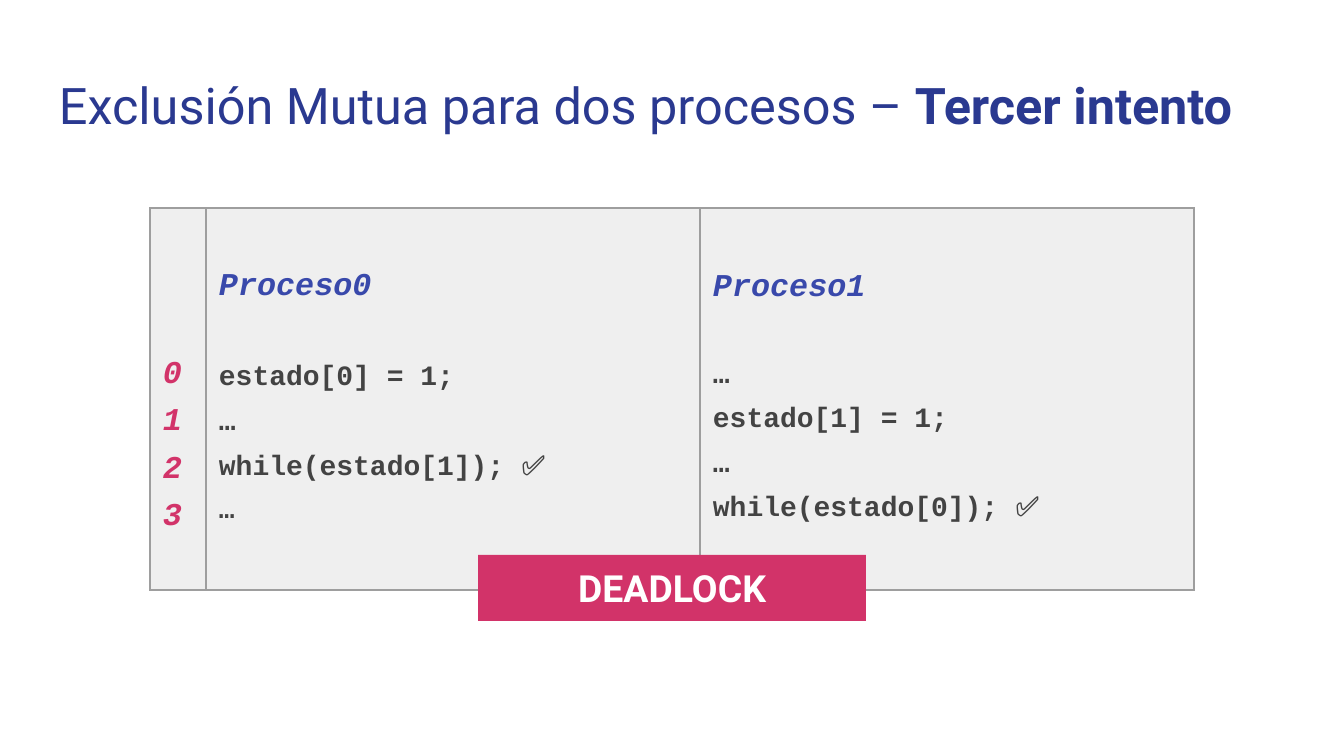
from lxml.etree import SubElement
from pptx import Presentation
from pptx.dml.color import RGBColor
from pptx.enum.shapes import MSO_SHAPE as Shape
from pptx.enum.text import MSO_ANCHOR as Anchor, PP_ALIGN as Align
from pptx.oxml.ns import qn
from pptx.util import Emu, Pt

EMU_PER_PX = 914400 / 134.4
INSET = 13
COLORS = {
    "title": "2A3990",
    "process": "3949AB",
    "code": "434343",
    "accent": "D23369",
    "cell": "EFEFEF",
    "border": "9E9E9E",
    "white": "FFFFFF",
}
FORMATS = {
    "title": {"name": "Roboto", "size": Pt(27), "bold": False},
    "attempt": {"name": "Roboto", "size": Pt(27), "bold": True},
    "process": {"name": "Courier New", "size": Pt(17), "bold": True, "italic": True},
    "code": {"name": "Courier New", "size": Pt(15), "bold": True, "italic": False},
    "small_code": {"name": "Courier New", "size": Pt(14), "bold": True, "italic": False},
    "banner": {"name": "Roboto", "size": Pt(20), "bold": True},
}


def px(value):
    return Emu(round(value * EMU_PER_PX))


def box(*values):
    return [px(value) for value in values]


def rgb(name):
    return RGBColor.from_string(COLORS[name])


def set_attributes(target, values):
    for name, value in values.items():
        setattr(target, name, value)


def add_run(paragraph, text, style, color):
    run = paragraph.add_run()
    run.text = text
    set_attributes(run.font, FORMATS[style])
    run.font.color.rgb = rgb(color)


def set_insets(target):
    for side in ("left", "top", "right", "bottom"):
        setattr(target, f"margin_{side}", px(INSET))
    target.vertical_anchor = Anchor.MIDDLE


def add_borders(cell):
    properties = cell._tc.get_or_add_tcPr()
    for side in ("lnL", "lnR", "lnT", "lnB"):
        line = SubElement(properties, qn(f"a:{side}"), w=str(Pt(0.75)))
        fill = SubElement(line, qn("a:solidFill"))
        SubElement(fill, qn("a:srgbClr"), val=COLORS["border"])


def add_column(slide, left, width, lines, top_inset=INSET):
    table = slide.shapes.add_table(1, 1, *box(left, 208, width, 382)).table
    set_attributes(table, {"first_row": False, "horz_banding": False})
    cell = table.cell(0, 0)
    set_insets(cell)
    cell.margin_top = px(top_inset)
    add_borders(cell)
    cell.fill.solid()
    cell.fill.fore_color.rgb = rgb("cell")
    frame = cell.text_frame
    for index, (text, style, color, space) in enumerate(lines):
        paragraph = frame.add_paragraph() if index else frame.paragraphs[0]
        set_attributes(paragraph, {"line_spacing": 0.7, "space_before": Pt(space)})
        add_run(paragraph, text, style, color)


def process_lines(name, heading_gap, code, last_style):
    lines = [(name, "process", "process", 0)]
    for index, text in enumerate(code):
        style = last_style if index == len(code) - 1 else "code"
        lines.append((text, style, "code", 12 if index else heading_gap))
    return lines


def add_title(slide, plain, strong):
    frame = slide.shapes.add_textbox(*box(46, 60, 1253, 89)).text_frame
    frame.word_wrap = True
    set_insets(frame)
    paragraph = frame.paragraphs[0]
    add_run(paragraph, plain, "title", "title")
    add_run(paragraph, strong, "attempt", "title")


def add_banner(slide, text):
    shape = slide.shapes.add_shape(Shape.RECTANGLE, *box(478, 555, 388, 66))
    shape.shadow.inherit = False
    shape.fill.solid()
    shape.fill.fore_color.rgb = rgb("accent")
    shape.line.fill.background()
    set_insets(shape.text_frame)
    paragraph = shape.text_frame.paragraphs[0]
    paragraph.alignment = Align.CENTER
    add_run(paragraph, text, "banner", "white")


def main():
    presentation = Presentation()
    presentation.slide_width, presentation.slide_height = box(1344, 756)
    slide = presentation.slides.add_slide(presentation.slide_layouts[6])

    add_title(slide, "Exclusión Mutua para dos procesos – ", "Tercer intento")
    first_code = ["estado[0] = 1;", "…", "while(estado[1]); ✅", "…"]
    second_code = ["…", "estado[1] = 1;", "…", "while(estado[0]); ✅"]
    add_column(slide, 206, 494, process_lines("Proceso0", 36, first_code, "small_code"))
    add_column(slide, 700, 494, process_lines("Proceso1", 34, second_code, "code"))
    steps = [(str(step), "process", "accent", 12 if step else 0) for step in range(4)]
    add_column(slide, 150, 56, steps, top_inset=109)
    add_banner(slide, "DEADLOCK")

    presentation.save("out.pptx")


if __name__ == "__main__":
    main()
